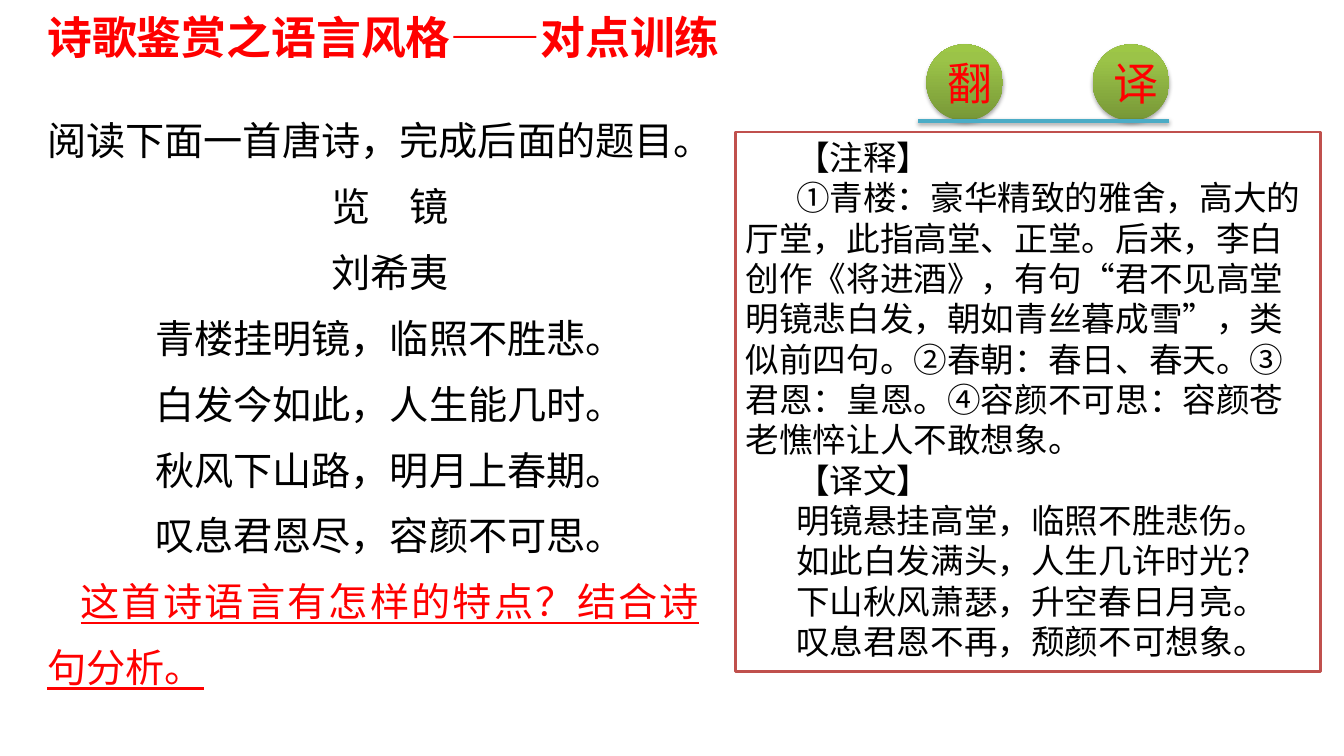
"""Builds a slide on the language style of a Tang poem, with notes and translation."""
from dataclasses import dataclass

from lxml.etree import SubElement
from pptx import Presentation
from pptx.dml.color import RGBColor
from pptx.enum.lang import MSO_LANGUAGE_ID as Language
from pptx.enum.shapes import MSO_CONNECTOR as Connector, MSO_SHAPE as Shape
from pptx.enum.text import MSO_ANCHOR as Anchor, MSO_AUTO_SIZE as AutoSize, PP_ALIGN as Align
from pptx.oxml import parse_xml
from pptx.oxml.ns import nsdecls, qn
from pptx.util import Inches, Pt


@dataclass(frozen=True)
class Theme:
    font: str = "Noto Sans CJK SC"
    ink: str = "000000"
    accent: str = "FF0000"
    paper: str = "FFFFFF"
    frame: str = "C0504D"
    rule: str = "4BACC6"
    badge: tuple = ((0, "779737"), (80, "9BC348"), (100, "9DC746"))
    heading: int = 32
    body: int = 28
    note: int = 24


THEME = Theme()


def write(para, text, size, color=THEME.ink, bold=False, underline=False,
          align=None, indent=0, spacing=None):
    if indent:
        props = para._p.get_or_add_pPr()
        props.set("marL", "0")
        props.set("indent", str(Inches(indent)))
    if align is not None:
        para.alignment = align
    if spacing:
        para.line_spacing = spacing
    span = para.add_run()
    span.text = text
    font = span.font
    font.size, font.bold, font.underline = Pt(size), bold, underline
    font.color.rgb = RGBColor.from_string(color)
    font.name = THEME.font
    font.language_id = Language.SIMPLIFIED_CHINESE
    east_asian = SubElement(span._r.get_or_add_rPr(), qn("a:ea"))
    east_asian.set("typeface", THEME.font)


class Canvas:
    """Holds the theme and the current slide, placed on a grid 40 columns wide."""

    def __init__(self, deck, theme):
        self.theme = theme
        self.slide = deck.slides.add_slide(deck.slide_layouts[6])
        self.shapes = self.slide.shapes
        self.cell = deck.slide_width / 40

    def place(self, *cells):
        return [round(cell * self.cell) for cell in cells]

    def fill_text(self, box, lines, anchor=Anchor.TOP, **style):
        frame = box.text_frame
        frame.word_wrap = True
        frame.vertical_anchor = anchor
        for index, (text, changes) in enumerate(lines):
            para = frame.add_paragraph() if index else frame.paragraphs[0]
            write(para, text, **{**style, **changes})
        return frame

    def text(self, area, lines, **style):
        box = self.shapes.add_textbox(*self.place(*area))
        self.fill_text(box, lines, **style).auto_size = AutoSize.SHAPE_TO_FIT_TEXT

    def panel(self, area, lines, **style):
        box = self.shapes.add_shape(Shape.RECTANGLE, *self.place(*area))
        box.shadow.inherit = False
        box.fill.solid()
        box.fill.fore_color.rgb = RGBColor.from_string(self.theme.paper)
        box.line.color.rgb = RGBColor.from_string(self.theme.frame)
        box.line.width = Pt(2)
        self.fill_text(box, lines, align=Align.LEFT, **style).auto_size = AutoSize.SHAPE_TO_FIT_TEXT

    def badge(self, left, top, size, text):
        disc = self.shapes.add_shape(Shape.OVAL, *self.place(left, top, size, size))
        disc.line.fill.background()
        stops = "".join(
            f'<a:gs pos="{share * 1000}"><a:srgbClr val="{color}"/></a:gs>'
            for share, color in self.theme.badge)
        gradient = parse_xml(
            f'<a:gradFill {nsdecls("a")} rotWithShape="1"><a:gsLst>{stops}</a:gsLst>'
            '<a:lin ang="16200000" scaled="0"/></a:gradFill>')
        disc._element.spPr.find(qn("a:prstGeom")).addnext(gradient)
        self.cast_shadow(disc)
        self.fill_text(disc, [(text, {})], Anchor.MIDDLE, size=self.theme.heading,
                       color=self.theme.accent, align=Align.CENTER)

    def rule(self, left, right, level):
        line = self.shapes.add_connector(
            Connector.STRAIGHT, *self.place(left, level, right, level))
        line.line.color.rgb = RGBColor.from_string(self.theme.rule)
        line.line.width = Pt(3)
        self.cast_shadow(line)

    def cast_shadow(self, shape):
        shape._element.spPr.append(parse_xml(
            f'<a:effectLst {nsdecls("a")}>'
            f'<a:outerShdw blurRad="{Pt(3.1)}" dist="{Pt(1.8)}" dir="5400000" rotWithShape="0">'
            f'<a:srgbClr val="{self.theme.ink}"><a:alpha val="35000"/></a:srgbClr>'
            '</a:outerShdw></a:effectLst>'))


POEM = ["览　镜", "刘希夷", "青楼挂明镜，临照不胜悲。", "白发今如此，人生能几时。",
        "秋风下山路，明月上春期。", "叹息君恩尽，容颜不可思。"]
NOTES = [
    "【注释】",
    "①青楼：豪华精致的雅舍，高大的厅堂，此指高堂、正堂。后来，李白创作《将进酒》，"
    "有句“君不见高堂明镜悲白发，朝如青丝暮成雪”，类似前四句。②春朝：春日、春天。"
    "③君恩：皇恩。④容颜不可思：容颜苍老憔悴让人不敢想象。",
    "【译文】",
    "明镜悬挂高堂，临照不胜悲伤。",
    "如此白发满头，人生几许时光？",
    "下山秋风萧瑟，升空春日月亮。",
    "叹息君恩不再，颓颜不可想象。",
]


def main():
    deck = Presentation()
    deck.slide_width, deck.slide_height = Inches(13.33), Inches(7.5)
    canvas = Canvas(deck, THEME)

    canvas.text((1.11, 0.15, 25.3, 1.92), [("诗歌鉴赏之语言风格——对点训练", {})],
                size=THEME.heading, color=THEME.accent, bold=True)

    verse = {"align": Align.CENTER, "indent": 0.33}
    question = {"align": Align.JUSTIFY, "indent": 0.33,
                "color": THEME.accent, "underline": True}
    canvas.text((1.11, 2.76, 20, 17.82),
                [("阅读下面一首唐诗，完成后面的题目。", {})]
                + [(line, verse) for line in POEM]
                + [("这首诗语言有怎样的特点？结合诗句分析。", question)],
                size=THEME.body, spacing=1.4)

    canvas.panel((21.9, 3.93, 17.4, 16.05), [(line, {}) for line in NOTES],
                 size=THEME.note, indent=0.5)

    for index, word in enumerate("翻译"):
        canvas.badge(27.57 + 4.95 * index, 1.32, 2.28, word)
    canvas.rule(27.33, 34.8, 3.6)

    deck.save("out.pptx")


if __name__ == "__main__":
    main()
